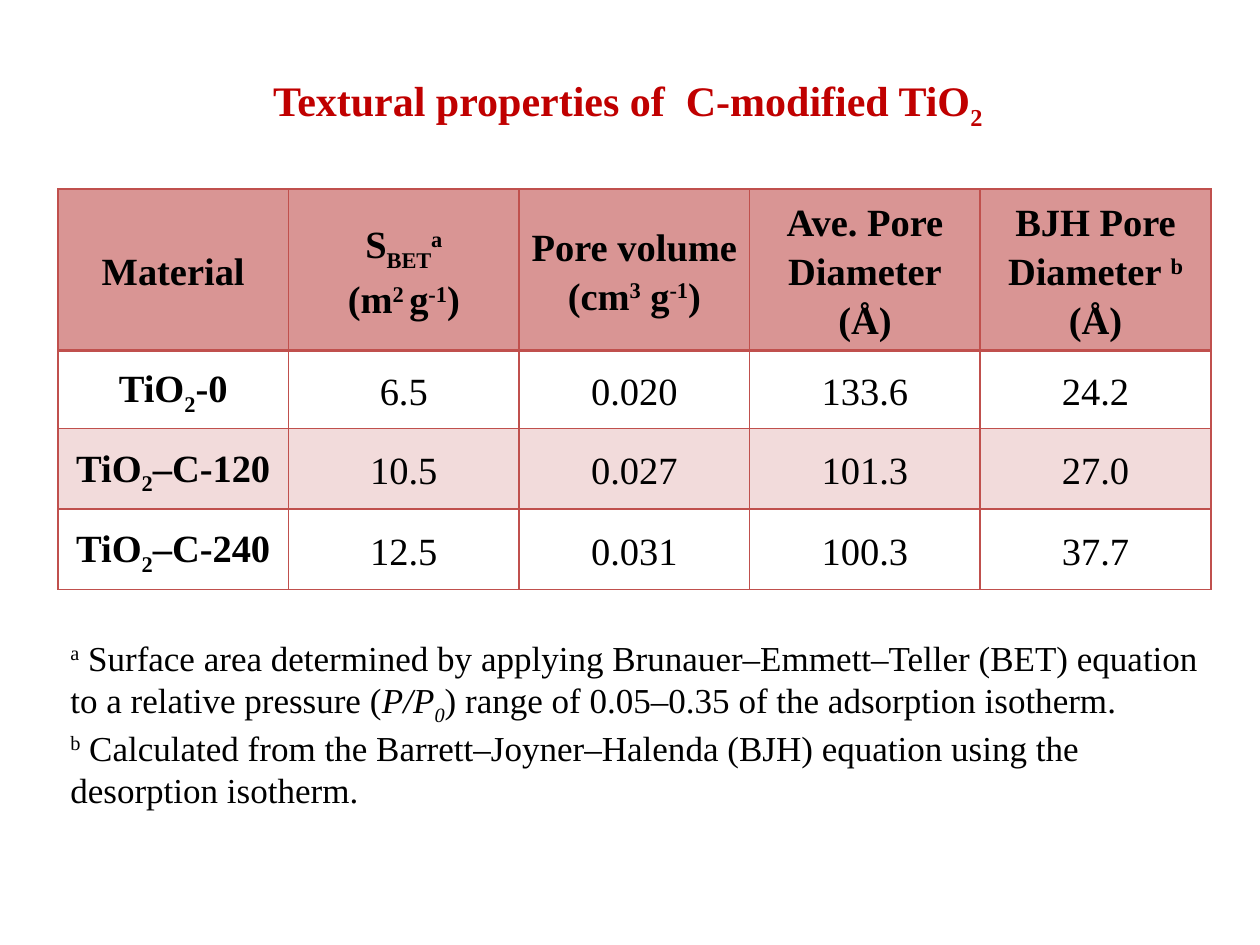
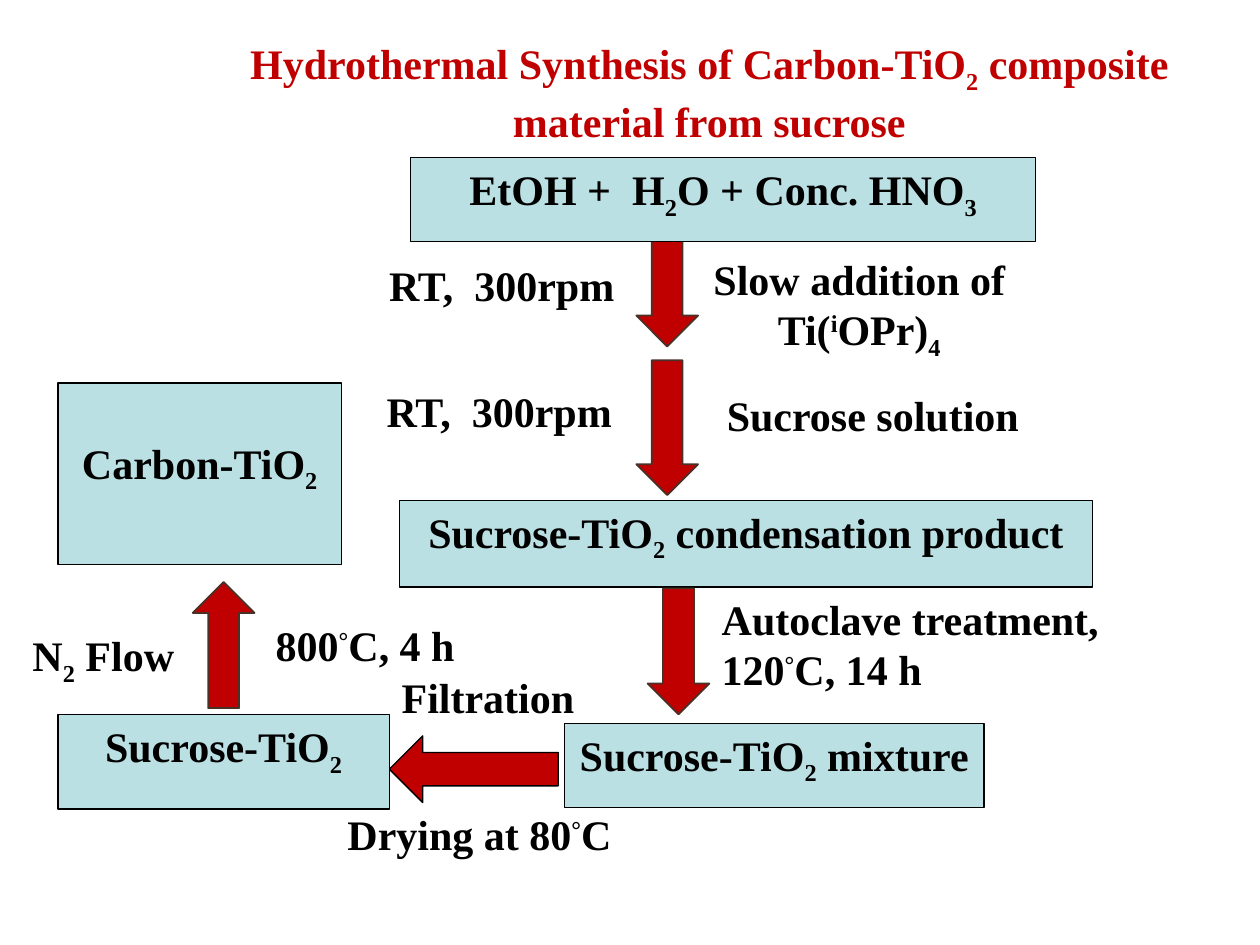
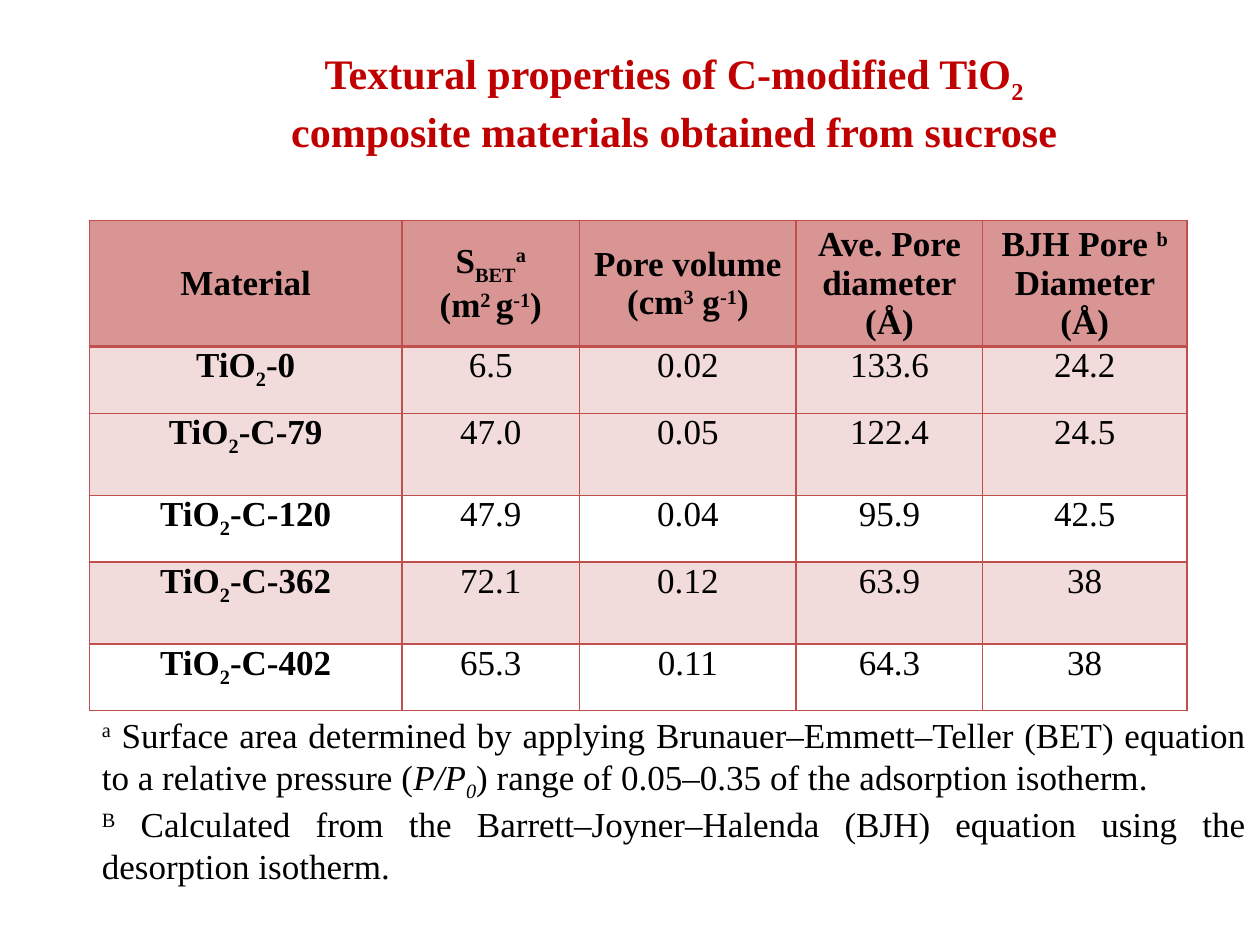
"""Build three slides on the synthesis and texture of carbon-modified TiO2."""
from lxml import etree
from pptx import Presentation, util as u
from pptx.dml.color import RGBColor
from pptx.enum import shapes, text
from pptx.oxml.ns import qn

COLORS = {
    "title": "C00000", "body": "000000", "arrow": "C00000", "arrow_line": "4A3128",
    "box": "BBE0E3", "header": "D99594", "band": "F2DBDB", "plain": "FFFFFF", "border": "C0504D",
}
FONT = "Times New Roman"
TITLE = {"size": u.Pt(24), "bold": True}
LABEL = TITLE
NOTE = {"size": u.Pt(20), "bold": False}
BASELINES = {"_": "-25000", "^": "30000"}
LEFT, CENTER, JUSTIFY = text.PP_ALIGN.LEFT, text.PP_ALIGN.CENTER, text.PP_ALIGN.JUSTIFY
MIDDLE, TOP = text.MSO_ANCHOR.MIDDLE, text.MSO_ANCHOR.TOP


def write_lines(frame, lines, font_format, alignment, color="body", spacing=None):
    """Write lines whose parts are split by |; _ lowers, ^ raises and ~ slants a part."""
    frame.word_wrap = True
    for index, line in enumerate(lines):
        paragraph = frame.add_paragraph() if index else frame.paragraphs[0]
        paragraph.alignment = alignment
        paragraph.line_spacing = spacing
        for part in line.split("|"):
            run = paragraph.add_run()
            for name, value in {"name": FONT, **font_format}.items():
                setattr(run.font, name, value)
            run.font.color.rgb = RGBColor.from_string(COLORS[color])
            if part.startswith("~"):
                run.font.italic = True
                part = part[1:]
            if part[0] in BASELINES:
                run.font._element.set("baseline", BASELINES[part[0]])
                part = part[1:]
            run.text = part


def add_table(slide, left, top, widths, heights, rows, fills, size, anchor, spacing):
    """Add a bordered table with a header row and bold row names."""
    frame = slide.shapes.add_table(
        len(rows), len(widths), u.Inches(left), u.Inches(top),
        u.Inches(sum(widths)), u.Inches(sum(heights)))
    table = frame.table
    table.first_row = table.horz_banding = False
    for column, width in zip(table.columns, widths):
        column.width = u.Inches(width)
    for row, height in zip(table.rows, heights):
        row.height = u.Inches(height)
    for row_index, row in enumerate(rows):
        for column_index, content in enumerate(row):
            cell = table.cell(row_index, column_index)
            cell.margin_left = cell.margin_right = u.Inches(0.07)
            cell.margin_top = cell.margin_bottom = 0
            cell.vertical_anchor = anchor if row_index else MIDDLE
            properties = cell._tc.get_or_add_tcPr()
            for side in ("lnL", "lnR", "lnT", "lnB"):
                thick = (row_index, side) in ((0, "lnB"), (1, "lnT"))
                line = etree.SubElement(properties, qn(f"a:{side}"), w=str(u.Pt(2.25 if thick else 1)))
                fill = etree.SubElement(line, qn("a:solidFill"))
                etree.SubElement(fill, qn("a:srgbClr"), val=COLORS["border"])
            cell.fill.solid()
            cell.fill.fore_color.rgb = RGBColor.from_string(COLORS[fills[row_index]])
            bold = row_index == 0 or column_index == 0
            write_lines(cell.text_frame, content.split("\n"), {"size": u.Pt(size), "bold": bold},
                        CENTER, spacing=spacing)


presentation = Presentation()
presentation.slide_width, presentation.slide_height = u.Inches(10), u.Inches(7.5)
blank = presentation.slide_layouts[6]
texture, synthesis, sucrose = [presentation.slides.add_slide(blank) for _ in range(3)]

titles = [
    (texture, (2.07, 0.54, 6, 0.5), LEFT, "Textural properties of  C-modified TiO|_2"),
    (synthesis, (1.51, 0.25, 8.24, 0.83), CENTER,
     "Hydrothermal Synthesis of Carbon-TiO|_2| composite material from sucrose"),
    (sucrose, (1.89, 0.33, 6.92, 0.91), CENTER,
     "Textural properties of C-modified TiO|_2| composite materials obtained from sucrose"),
]
for slide, place, alignment, title in titles:
    box = slide.shapes.add_textbox(*map(u.Inches, place))
    write_lines(box.text_frame, [title], TITLE, alignment, "title")

shared_header = ["Material", "S|_BET|^a\n(m|^2 |g|^-1|)", "Pore volume\n(cm|^3| g|^-1|)"]
texture_rows = [
    shared_header + ["Ave. Pore Diameter\n(Å)", "BJH Pore Diameter |^b\n(Å)"],
    ["TiO|_2|-0", "6.5", "0.020", "133.6", "24.2"],
    ["TiO|_2|–C-120", "10.5", "0.027", "101.3", "27.0"],
    ["TiO|_2|–C-240", "12.5", "0.031", "100.3", "37.7"],
]
add_table(texture, 0.46, 1.5, [1.83] * 5, [1.28, 0.62, 0.64, 0.64], texture_rows,
          ["header", "plain", "band", "plain"], 22, MIDDLE, 1.15)

sucrose_rows = [
    shared_header + ["Ave. Pore diameter\n(Å)", "BJH Pore |^b\nDiameter (Å)"],
    ["TiO|_2|-0", "6.5", "0.02", "133.6", "24.2"],
    ["TiO|_2|-C-79", "47.0", "0.05", "122.4", "24.5"],
    ["TiO|_2|-C-120", "47.9", "0.04", "95.9", "42.5"],
    ["TiO|_2|-C-362", "72.1", "0.12", "63.9", "38"],
    ["TiO|_2|-C-402", "65.3", "0.11", "64.3", "38"],
]
add_table(sucrose, 0.71, 1.75, [2.48, 1.41, 1.72, 1.48, 1.62], [0.98, 0.53, 0.65, 0.53, 0.65, 0.53],
          sucrose_rows, ["header", "band", "band", "plain", "band", "plain"], 20, TOP, None)

for slide, left, top, alignment, mark in [(texture, 0.46, 5, LEFT, "b"), (sucrose, 0.71, 5.61, JUSTIFY, "B")]:
    notes = [
        "^a| Surface area determined by applying Brunauer–Emmett–Teller (BET) equation to a relative "
        "pressure (|~P/P|~_0|) range of 0.05–0.35 of the adsorption isotherm.",
        f"^{mark}| Calculated from the Barrett–Joyner–Halenda (BJH) equation using the desorption isotherm.",
    ]
    box = slide.shapes.add_textbox(*map(u.Inches, (left, top, 9.28, 1.45)))
    write_lines(box.text_frame, notes, NOTE, alignment)

DOWN, UP, BACK = shapes.MSO_SHAPE.DOWN_ARROW, shapes.MSO_SHAPE.UP_ARROW, shapes.MSO_SHAPE.LEFT_ARROW
RECTANGLE = shapes.MSO_SHAPE.RECTANGLE
steps = [
    (DOWN, (5.05, 1.88, 0.49, 0.87), None, 0),
    (DOWN, (5.05, 2.86, 0.49, 1.07), None, 0),
    (RECTANGLE, (3.26, 1.25, 4.96, 0.67), "EtOH +  H|_2|O + Conc. HNO|_3", 0.05),
    (RECTANGLE, (3.17, 3.97, 5.5, 0.69), "Sucrose-TiO|_2| condensation product", 0.05),
    (RECTANGLE, (4.48, 5.74, 3.33, 0.67), "Sucrose-TiO|_2| mixture", 0.05),
    (DOWN, (5.14, 4.67, 0.49, 1), None, 0),
    (BACK, (3.09, 5.84, 1.34, 0.53), None, 0),
    (RECTANGLE, (0.46, 5.67, 2.63, 0.75), "Sucrose-TiO|_2", 0.05),
    (UP, (1.53, 4.62, 0.49, 1), None, 0),
    (RECTANGLE, (0.46, 3.04, 2.25, 1.44), "Carbon-TiO|_2", 0.43),
]
for kind, place, content, margin in steps:
    shape = synthesis.shapes.add_shape(kind, *map(u.Inches, place))
    shape.shadow.inherit = False
    vertical = kind in (DOWN, UP)
    shape.fill.solid()
    shape.fill.fore_color.rgb = RGBColor.from_string(COLORS["box" if content else "arrow"])
    shape.line.color.rgb = RGBColor.from_string(COLORS["arrow_line" if vertical else "body"])
    shape.line.width = u.Pt(1 if vertical else 0.75)
    if content:
        shape.text_frame.vertical_anchor = TOP
        shape.text_frame.margin_top = u.Inches(margin)
        write_lines(shape.text_frame, [content], LABEL, CENTER)

labels = [
    ((5.39, 1.96, 2.86, 0.91), CENTER, "Slow addition of Ti(|^i|OPr)|_4"),
    ((2.99, 2.01, 2.1, 0.5), LEFT, "RT,  300rpm"),
    ((5.67, 3.04, 2.6, 0.5), LEFT, "Sucrose solution"),
    ((2.97, 3.01, 2.1, 0.5), LEFT, "RT,  300rpm"),
    ((5.63, 4.66, 3.54, 0.91), LEFT, "Autoclave treatment, 120|^°|C, 14 h"),
    ((2.66, 6.37, 2.73, 0.5), LEFT, "Drying at 80|^°|C"),
    ((3.09, 5.28, 1.64, 0.5), LEFT, "Filtration"),
    ((2.09, 4.87, 1.7, 0.5), LEFT, "800|^°|C, 4 h"),
    ((0.16, 4.95, 1.4, 0.5), LEFT, "N|_2| Flow"),
]
for place, alignment, label in labels:
    box = synthesis.shapes.add_textbox(*map(u.Inches, place))
    write_lines(box.text_frame, [label], LABEL, alignment)

presentation.save("out.pptx")
